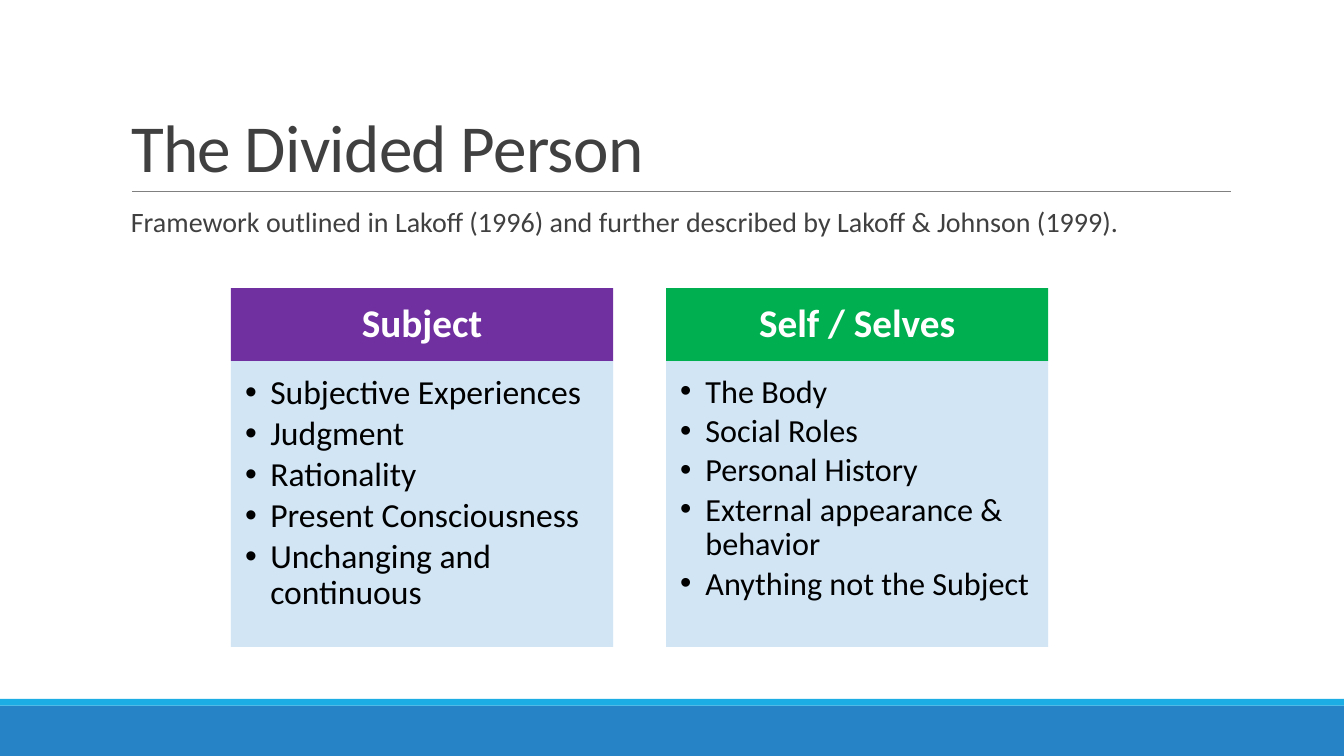
import pptx
import pptx.util
import pptx.dml.color
import pptx.enum.shapes
import pptx.enum.text
import pptx.oxml
import pptx.oxml.ns
from dataclasses import dataclass
from lxml import etree

ALIGN = pptx.enum.text.PP_ALIGN
ANCHOR = pptx.enum.text.MSO_ANCHOR
COLUMNS, ROWS = 160, 90


@dataclass(frozen=True)
class Theme:
    font: str = "Calibri"
    ink: str = "404040"
    rule: str = "808080"
    strip: str = "1CADE4"
    band: str = "2683C6"
    panel: str = "CDE3F5"
    panel_opacity: int = 90
    white: str = "FFFFFF"
    black: str = "000000"
    title_size: int = 48
    lead_size: int = 20
    head_size: int = 28


CARDS = [
    ("Subject", "7030A0", 24, [
        "Subjective Experiences", "Judgment", "Rationality",
        "Present Consciousness", "Unchanging and continuous"]),
    ("Self / Selves", "00B050", 23, [
        "The Body", "Social Roles", "Personal History",
        "External appearance & behavior", "Anything not the Subject"]),
]


def rgb(color):
    return pptx.dml.color.RGBColor.from_string(color)


def assign(target, values):
    for name, value in values.items():
        setattr(target, name, value)


def add_xml(parent, tag, **attributes):
    return etree.SubElement(parent, pptx.oxml.ns.qn(tag), attributes)


class SlideBuilder:
    """Draws on one slide, with lengths in columns and rows of its grid."""

    def __init__(self, deck, theme):
        self.theme = theme
        self.page = deck.slides.add_slide(deck.slide_layouts[5])
        self.column = deck.slide_width / COLUMNS
        self.row = deck.slide_height / ROWS

    def place(self, left, top, width, height):
        return (round(left * self.column), round(top * self.row),
                round(width * self.column), round(height * self.row))

    def rectangle(self, area, color, opacity=100):
        box = self.page.shapes.add_shape(
            pptx.enum.shapes.MSO_SHAPE.RECTANGLE, *self.place(*area))
        box.shadow.inherit = False
        box.line.fill.background()
        box.fill.solid()
        box.fill.fore_color.rgb = rgb(color)
        if opacity < 100:
            tint = box._element.spPr.find(".//" + pptx.oxml.ns.qn("a:srgbClr"))
            add_xml(tint, "a:alpha", val=str(opacity * 1000))
        return box

    def rule(self, left, right, row):
        start_x, y, end_x, _ = self.place(left, row, right, 0)
        line = self.page.shapes.add_connector(
            pptx.enum.shapes.MSO_CONNECTOR.STRAIGHT, start_x, y, end_x, y)
        line.line.color.rgb = rgb(self.theme.rule)
        line.line.width = pptx.util.Pt(0.5)
        add_xml(line._element.spPr, "a:effectLst")

    def set_text(self, box, lines, size, color, insets, anchor=ANCHOR.TOP,
                 bold=False, bullets=False, **layout):
        """Fill a box with paragraphs; insets are left, top, right, bottom in inches."""
        frame = box.text_frame
        sides = ("margin_left", "margin_top", "margin_right", "margin_bottom")
        assign(frame, dict(zip(sides, map(pptx.util.Inches, insets))))
        assign(frame, {"word_wrap": True, "vertical_anchor": anchor,
                       "auto_size": pptx.enum.text.MSO_AUTO_SIZE.NONE})
        for index, line in enumerate(lines):
            para = frame.add_paragraph() if index else frame.paragraphs[0]
            assign(para, {"alignment": ALIGN.LEFT, "line_spacing": 0.9, **layout})
            span = para.add_run()
            span.text = line
            assign(span.font, {"name": self.theme.font, "bold": bold,
                               "size": pptx.util.Pt(size)})
            span.font.color.rgb = rgb(color)
            if bullets:
                indent = pptx.util.Inches(0.25)
                properties = para._p.get_or_add_pPr()
                properties.set("marL", str(indent))
                properties.set("indent", str(-indent))
                add_xml(properties, "a:buFont", typeface="Arial")
                add_xml(properties, "a:buChar", char="•")

    def title(self, text, area):
        box = self.page.shapes.title
        assign(box, dict(zip(("left", "top", "width", "height"), self.place(*area))))
        self.set_text(box, [text], self.theme.title_size, self.theme.ink,
                      (0.1, 0.05, 0.1, 0.05), ANCHOR.BOTTOM, line_spacing=0.85)
        span = box.text_frame.paragraphs[0].runs[0]
        span.font._element.set("spc", "-50")

    def lead(self, text, area):
        box = self.page.shapes.add_textbox(*self.place(*area))
        self.set_text(box, [text], self.theme.lead_size, self.theme.ink,
                      (0.1, 0.05, 0, 0.05))

    def card(self, left, top, width, heading, color, size, points):
        head_height, panel_height = 8.7, 34
        head = self.rectangle((left, top, width, head_height), color)
        self.set_text(head, [heading], self.theme.head_size, self.theme.white,
                      (0.22, 0.12, 0.22, 0.12), ANCHOR.MIDDLE, bold=True,
                      alignment=ALIGN.CENTER)
        panel = self.rectangle((left, top + head_height, width, panel_height),
                               self.theme.panel, self.theme.panel_opacity)
        self.set_text(panel, points, size, self.theme.black,
                      (0.14, 0.14, 0.18, 0.2), bullets=True,
                      space_after=pptx.util.Pt(0.14 * size))


def main():
    deck = pptx.Presentation()
    deck.slide_width = pptx.util.Inches(13.33)
    deck.slide_height = pptx.util.Inches(7.5)
    theme = Theme()
    slide = SlideBuilder(deck, theme)

    slide.rectangle((0, 84, COLUMNS, 6), theme.band)
    slide.rectangle((0, 83.2, COLUMNS, 0.8), theme.strip)
    slide.rule(15.7, 146.5, 22.8)
    slide.title("The Divided Person", (14.4, 3.7, 132, 19.1))
    slide.lead("Framework outlined in Lakoff (1996) and further described by "
               "Lakoff & Johnson (1999).", (14.4, 24.2, 132, 5))

    card_width, gap = 45.5, 6.3
    for index, card in enumerate(CARDS):
        slide.card(27.5 + index * (card_width + gap), 34.3, card_width, *card)

    deck.save("out.pptx")


if __name__ == "__main__":
    main()
